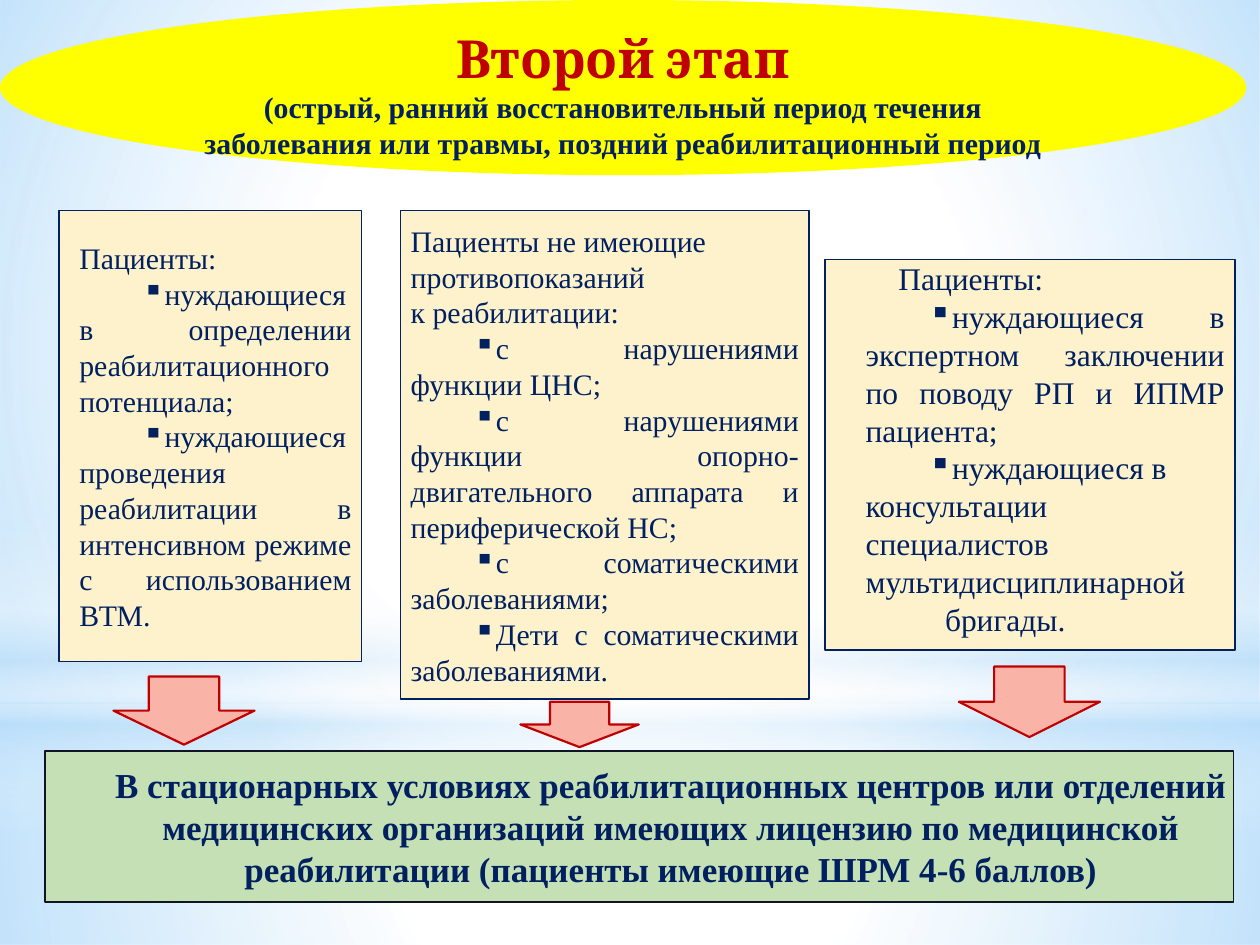
from lxml import etree
from pptx import Presentation
from pptx.dml.color import RGBColor
from pptx.enum.shapes import MSO_SHAPE
from pptx.enum.text import MSO_ANCHOR, PP_ALIGN
from pptx.oxml import parse_xml
from pptx.oxml.ns import nsdecls, qn
from pptx.util import Inches, Pt

RECT, OVAL, DOWN_ARROW = MSO_SHAPE.RECTANGLE, MSO_SHAPE.OVAL, MSO_SHAPE.DOWN_ARROW
TOP, MIDDLE = MSO_ANCHOR.TOP, MSO_ANCHOR.MIDDLE
LEFT, CENTER, JUSTIFY = PP_ALIGN.LEFT, PP_ALIGN.CENTER, PP_ALIGN.JUSTIFY

WHITE = RGBColor(0xFF, 0xFF, 0xFF)
SKY = RGBColor(0xB4, 0xDC, 0xFA)
YELLOW = RGBColor(0xFF, 0xFF, 0x00)
RED = RGBColor(0xC0, 0x00, 0x00)
NAVY = RGBColor(0x00, 0x20, 0x60)
CREAM = RGBColor(0xFE, 0xF2, 0xCD)
GREEN = RGBColor(0xC5, 0xE0, 0xB5)
INK = RGBColor(0x11, 0x14, 0x22)
PINK = RGBColor(0xF9, 0xB3, 0xA7)

RADIAL = ('<a:path path="circle"><a:fillToRect l="50000" t="50000" '
          'r="50000" b="50000"/></a:path>')
VERTICAL = '<a:lin ang="5400000" scaled="0"/>'


class StageSlide:
    body_font = "Times New Roman"
    title_font = "Cambria"
    bullet = "▪"

    def __init__(self, deck):
        self.slide = deck.slides.add_slide(deck.slide_layouts[6])
        background = self.slide.background.fill
        background.solid()
        background.fore_color.rgb = WHITE

    def shape(self, kind, place, fill=None, line=None, weight=1):
        shape = self.slide.shapes.add_shape(kind, *map(Inches, place))
        shape.shadow.inherit = False
        if fill is not None:
            shape.fill.solid()
            shape.fill.fore_color.rgb = fill
        if line is None:
            shape.line.fill.background()
        else:
            shape.line.color.rgb = line
            shape.line.width = Pt(weight)
        return shape

    def glow(self, kind, place, stops, direction):
        marks = "".join(
            f'<a:gs pos="{position * 1000}"><a:srgbClr val="{color}">'
            f'<a:alpha val="{opacity * 1000}"/></a:srgbClr></a:gs>'
            for position, color, opacity in stops)
        gradient = parse_xml(f'<a:gradFill {nsdecls("a")} rotWithShape="1">'
                             f'<a:gsLst>{marks}</a:gsLst>{direction}</a:gradFill>')
        properties = self.shape(kind, place)._element.spPr
        properties.find(qn("a:prstGeom")).addnext(gradient)

    def panel(self, kind, place, fill, line=None, anchor=MIDDLE, side=0):
        frame = self.shape(kind, place, fill, line).text_frame
        frame.word_wrap = True
        frame.vertical_anchor = anchor
        frame.margin_left = frame.margin_right = Inches(side)
        frame.margin_top = frame.margin_bottom = 0
        return frame

    def paragraph(self, frame, text, size, align=JUSTIFY, margin=0, indent=0,
                  bulleted=False, bold=False, color=NAVY, font=body_font):
        first = frame.paragraphs[0]
        paragraph = frame.add_paragraph() if first.runs else first
        paragraph.alignment = align
        properties = paragraph._p.get_or_add_pPr()
        properties.set("marL", str(Inches(margin)))
        properties.set("indent", str(Inches(indent)))
        if bulleted:
            mark = etree.SubElement(properties, qn("a:buChar"))
            mark.set("char", self.bullet)
        run = paragraph.add_run()
        run.text = text
        run.font.name = font
        run.font.size = Pt(size)
        run.font.bold = bold
        run.font.color.rgb = color

    def arrow(self, place):
        self.shape(DOWN_ARROW, place, PINK, RED, 1.25)


def main():
    deck = Presentation()
    deck.slide_width, deck.slide_height = Inches(10), Inches(7.5)
    stage = StageSlide(deck)

    stage.glow(RECT, (0, 5.58, 10, 1.92),
               [(0, WHITE, 91), (37, WHITE, 76), (100, SKY, 79)], RADIAL)
    stage.glow(RECT, (0, 0, 10, 5.58),
               [(0, WHITE, 89), (48, WHITE, 62), (100, SKY, 79)], RADIAL)
    stage.glow(RECT, (0, 4.12, 10, 2.5),
               [(0, WHITE, 0), (29, WHITE, 30), (45, SKY, 40),
                (55, WHITE, 26), (65, SKY, 60), (100, WHITE, 0)], VERTICAL)
    stage.glow(OVAL, (0, 1.75, 10, 5.58),
               [(0, WHITE, 100), (56, WHITE, 0)], RADIAL)

    heading = stage.panel(OVAL, (0, 0, 9.89, 1.39), YELLOW, anchor=TOP)
    stage.paragraph(heading, "Второй этап", 30, CENTER, bold=True, color=RED,
                    font=stage.title_font)
    stage.paragraph(heading, "(острый, ранний восстановительный период течения "
                    "заболевания или травмы, поздний реабилитационный период",
                    17, CENTER, bold=True)

    eligible = stage.panel(RECT, (3.18, 1.67, 3.24, 3.88), CREAM, NAVY, side=0.08)
    for text in ("Пациенты не имеющие", "противопоказаний", "к реабилитации:"):
        stage.paragraph(eligible, text, 17)
    for text in ("с нарушениями функции ЦНС;",
                 "с нарушениями функции опорно-двигательного аппарата "
                 "и периферической НС;",
                 "с соматическими заболеваниями;",
                 "Дети с соматическими заболеваниями."):
        stage.paragraph(eligible, text, 17, indent=0.5, bulleted=True)

    setting = stage.panel(RECT, (0.36, 5.96, 9.43, 1.2), GREEN, INK)
    for text in ("В стационарных условиях реабилитационных центров или отделений",
                 "медицинских организаций имеющих лицензию по медицинской",
                 "реабилитации (пациенты имеющие ШРМ 4-6 баллов)"):
        stage.paragraph(setting, text, 20, CENTER, indent=0.5, bold=True)

    expertise = stage.panel(RECT, (6.55, 2.06, 3.25, 3.1), CREAM, NAVY, TOP, 0.08)
    stage.paragraph(expertise, "Пациенты:", 18, LEFT, indent=0.5)
    stage.paragraph(expertise, "нуждающиеся в экспертном заключении по поводу "
                    "РП и ИПМР пациента;", 18, JUSTIFY, 0.24, 0.5, True)
    stage.paragraph(expertise, "нуждающиеся в консультации специалистов "
                    "мультидисциплинарной", 18, LEFT, 0.24, 0.5, True)
    stage.paragraph(expertise, "бригады.", 18, LEFT, 0.24, 0.63)

    potential = stage.panel(RECT, (0.47, 1.67, 2.4, 3.58), CREAM, NAVY, side=0.08)
    stage.paragraph(potential, "Пациенты:", 17, margin=0.08)
    for text in ("нуждающиеся в определении реабилитационного потенциала;",
                 "нуждающиеся проведения реабилитации в интенсивном режиме "
                 "с использованием ВТМ."):
        stage.paragraph(potential, text, 17, JUSTIFY, 0.08, 0.5, True)

    for place in ((0.9, 5.37, 1.12, 0.54), (4.13, 5.57, 0.94, 0.36),
                  (7.61, 5.29, 1.12, 0.56)):
        stage.arrow(place)

    deck.save("out.pptx")


if __name__ == "__main__":
    main()
